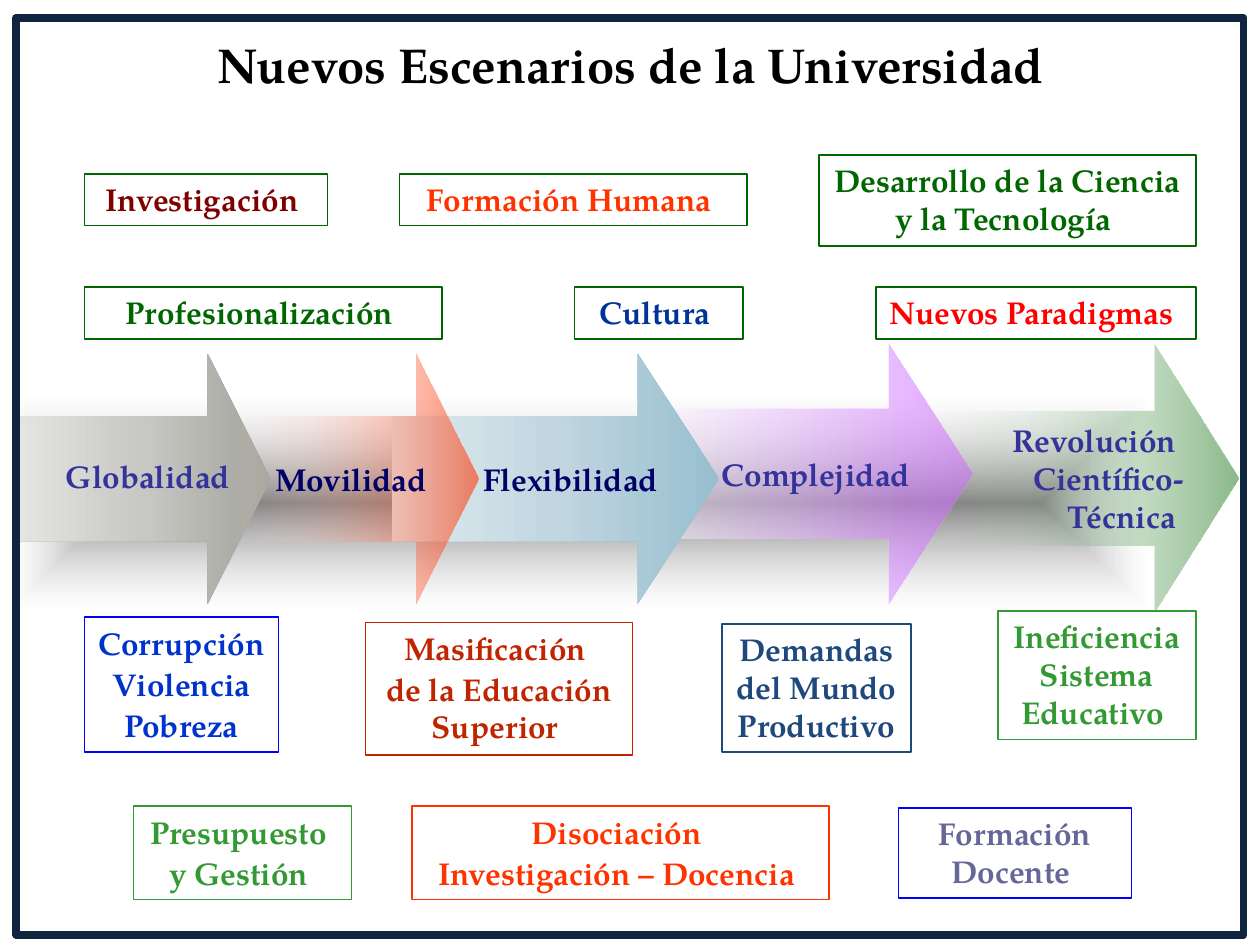
from lxml import etree
from pptx import Presentation
from pptx.dml.color import RGBColor
from pptx.enum.shapes import MSO_SHAPE as Shape
from pptx.enum.text import MSO_ANCHOR as Anchor, PP_ALIGN as Align
from pptx.oxml.ns import qn
from pptx.util import Inches, Pt

FONT = "TeX Gyre Pagella"
GREEN, LEAF, BLUE = "006600", "339933", "0000FF"
ORANGE, RUST, STEEL = "FF3300", "C02500", "1F497D"
INDIGO, NAVY = "333399", "000066"

TOP_LABELS = [
    ((0.67, 1.38, 1.93, 0.41), "Investigación ", "800000", GREEN),
    ((3.17, 1.38, 2.76, 0.41), "Formación Humana ", ORANGE, GREEN),
    ((6.5, 1.23, 2.99, 0.72), "Desarrollo de la Ciencia y la Tecnología ", GREEN, GREEN),
    ((0.67, 2.28, 2.84, 0.41), "Profesionalización ", GREEN, GREEN),
    ((4.56, 2.28, 1.34, 0.41), "Cultura ", "003399", GREEN),
    ((6.95, 2.28, 2.54, 0.41), "Nuevos Paradigmas ", "FF0000", GREEN),
]
BOTTOM_LABELS = [
    ((0.67, 4.9, 1.54, 1.07), "Corrupción \nViolencia\nPobreza", "0033CC", BLUE),
    ((2.9, 4.94, 2.12, 1.05), "Masificación \nde la Educación Superior ", RUST, RUST),
    ((5.73, 4.95, 1.5, 1.02), "Demandas del Mundo Productivo ", STEEL, STEEL),
    ((7.92, 4.85, 1.57, 1.02), "Ineficiencia Sistema Educativo ", LEAF, LEAF),
    ((1.06, 6.4, 1.73, 0.74), "Presupuesto \ny Gestión ", LEAF, LEAF),
    ((3.27, 6.4, 3.31, 0.74), "Disociación \nInvestigación – Docencia ", ORANGE, ORANGE),
    ((7.13, 6.41, 1.85, 0.72), "Formación Docente ", "666699", BLUE),
]
GRAY_STOPS = [(0, "A3A39C", 100), (50, "C7C7C4", 100), (100, "E4E4E2", 100)]
TEAL_STOPS = [(0, "98BFCF", 100), (50, "C1D6E0", 100), (100, "E1EBEF", 100)]
ARROWS = [
    ((5.04, 2.73, 2.68, 2.06), 0.326, "Complejidad ", INDIGO,
     [(0, "FFFFFF", 51), (100, "CC66FF", 59)], 0),
    ((0.14, 2.81, 2.01, 1.98), 0.253, "", INDIGO, GRAY_STOPS, 180),
    ((7.15, 2.73, 2.68, 2.13), 0.315, "Revolución \nCientífico-\nTécnica ", INDIGO,
     [(0, "FFFFFF", 0), (100, "006600", 46)], 0),
    ((3.11, 2.81, 2.6, 1.98), 0.327, "Flexibilidad ", NAVY, TEAL_STOPS, 180),
    ((1.79, 2.81, 2.01, 1.98), 0.253, "Movilidad ", NAVY,
     [(0, "FFFFFF", 0), (100, "FF3300", 59)], 0),
]


def color(value):
    return RGBColor.from_string(value)


def inches(box):
    return [Inches(length) for length in box]


def write_text(shape, text, hex_color, size=18, align=Align.CENTER,
               anchor=Anchor.TOP, wrap=True, gap=0):
    frame = shape.text_frame
    frame.word_wrap = wrap
    frame.vertical_anchor = anchor
    frame.margin_left = frame.margin_right = Inches(0.1)
    frame.margin_top = frame.margin_bottom = Inches(0.05)
    for index, line in enumerate(text.split("\n")):
        paragraph = frame.add_paragraph() if index else frame.paragraphs[0]
        paragraph.alignment = align
        paragraph.space_before = Pt(gap if index else 0)
        run = paragraph.add_run()
        run.text = line
        run.font.name = FONT
        run.font.size = Pt(size)
        run.font.bold = True
        run.font.color.rgb = color(hex_color)


def add_plain_shape(slide, kind, box, line=None, width=1):
    shape = slide.shapes.add_shape(kind, *inches(box))
    shape.shadow.inherit = False
    shape.fill.background()
    if line:
        shape.line.color.rgb = color(line)
        shape.line.width = Pt(width)
    else:
        shape.line.fill.background()
    return shape


def set_gradient(shape, stops, angle=None):
    properties = shape.fill._xPr
    gradient = etree.Element(qn("a:gradFill"), rotWithShape="1")
    stop_list = etree.SubElement(gradient, qn("a:gsLst"))
    for position, value, opacity in stops:
        stop = etree.SubElement(stop_list, qn("a:gs"), pos=str(position * 1000))
        tint = etree.SubElement(stop, qn("a:srgbClr"), val=value)
        if opacity < 100:
            etree.SubElement(tint, qn("a:alpha"), val=str(opacity * 1000))
    if angle is None:
        route = etree.SubElement(gradient, qn("a:path"), path="shape")
        etree.SubElement(route, qn("a:fillToRect"),
                         **dict.fromkeys("ltrb", "50000"))
    else:
        etree.SubElement(gradient, qn("a:lin"), ang=str(angle * 60000), scaled="1")
    properties.replace(properties.find(qn("a:noFill")), gradient)


def add_title(slide, box, text):
    title = slide.shapes.title
    title.left, title.top, title.width, title.height = inches(box)
    write_text(title, text, "000000", size=28)


def add_labels(slide, labels):
    for box, text, text_color, line_color in labels:
        label = add_plain_shape(slide, Shape.RECTANGLE, box, line_color)
        write_text(label, text, text_color, gap=1.8)


def add_arrow_band(slide, box):
    band = add_plain_shape(slide, Shape.RECTANGLE, box)
    set_gradient(band, [(0, "808080", 100), (100, "FFFFFF", 31)])
    for arrow_box, head, text, text_color, stops, angle in ARROWS:
        arrow = add_plain_shape(slide, Shape.RIGHT_ARROW, arrow_box)
        arrow.adjustments[0] = 0.5
        arrow.adjustments[1] = head
        set_gradient(arrow, stops, angle)
        if text:
            write_text(arrow, text, text_color, align=Align.RIGHT,
                       anchor=Anchor.MIDDLE, wrap=False)
    caption = slide.shapes.add_textbox(*inches((0.19, 3.58, 1.97, 0.4)))
    write_text(caption, "Globalidad", INDIGO)


def main():
    presentation = Presentation()
    presentation.slide_width = Inches(10)
    presentation.slide_height = Inches(7.5)
    slide = presentation.slides.add_slide(presentation.slide_layouts[5])
    add_title(slide, (0.14, 0.22, 9.73, 0.57), "Nuevos Escenarios de la Universidad")
    add_labels(slide, TOP_LABELS)
    add_labels(slide, BOTTOM_LABELS)
    add_arrow_band(slide, (0.08, 3.14, 9.03, 1.7))
    add_plain_shape(slide, Shape.RECTANGLE, (0.13, 0.14, 9.74, 7.28), "0F243E", 4.5)
    presentation.save("out.pptx")


if __name__ == "__main__":
    main()
